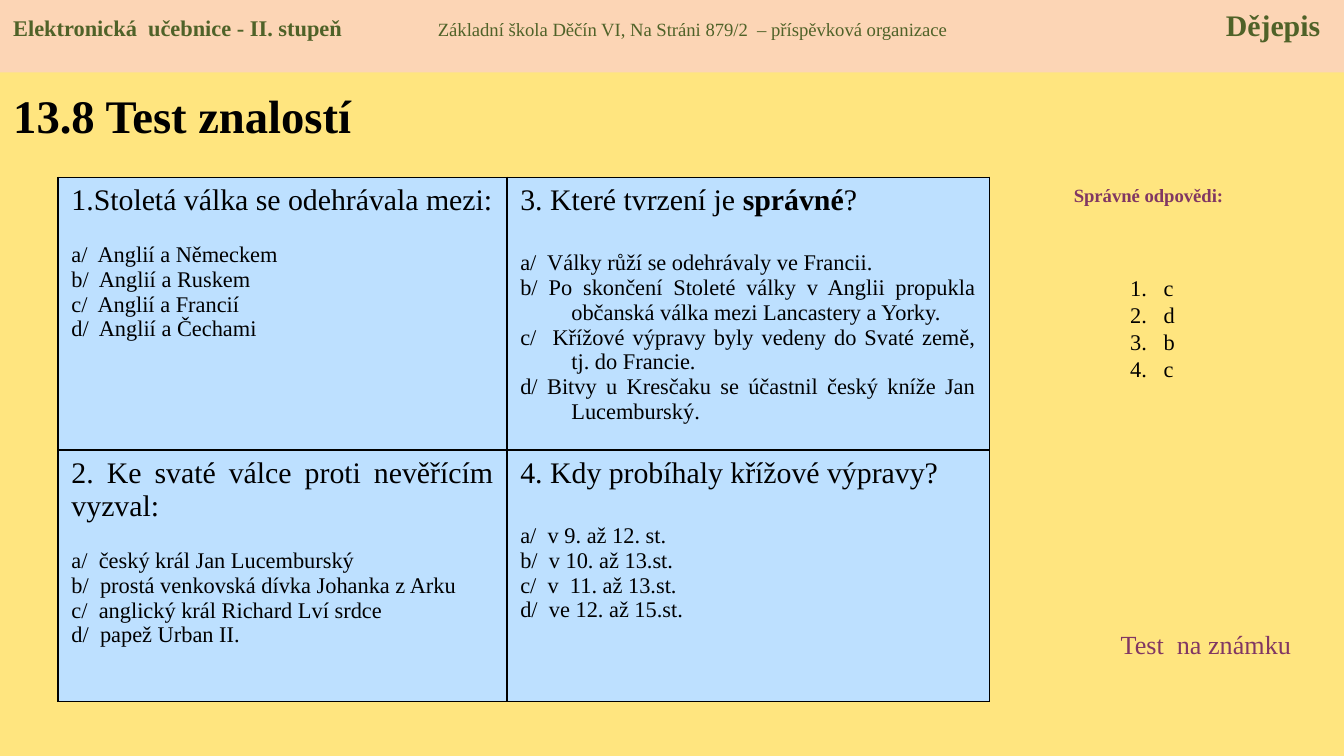
from dataclasses import dataclass, field
from typing import Any

from lxml.etree import SubElement
from pptx import Presentation
from pptx.dml.color import RGBColor as Rgb
from pptx.enum.shapes import MSO_SHAPE as Preset
from pptx.enum.text import MSO_ANCHOR as Anchor, PP_ALIGN as Align
from pptx.oxml.ns import qn
from pptx.util import Emu, Inches, Pt

UNIT = Inches(0.1)
COLUMNS, ROWS = 100, 56.25


@dataclass(frozen=True)
class Theme:
    font: str = "Times New Roman"
    page: str = "FFE57F"
    band: str = "FCD5B5"
    cell: str = "BDE0FF"
    ink: str = "000000"
    green: str = "4F6228"
    plum: str = "813763"
    title: int = 25
    heading: int = 16
    note: int = 14
    body: int = 12
    small: int = 10


THEME = Theme()


@dataclass(frozen=True)
class Span:
    text: str
    size: int = THEME.body
    color: str = THEME.ink
    bold: bool = False


@dataclass(frozen=True)
class Label:
    area: tuple[float, float, float, float]
    spans: list[Span]
    layout: dict[str, Any] = field(default_factory=dict)
    anchor: Anchor = Anchor.TOP


@dataclass(frozen=True)
class Question:
    heading: list[Span]
    answers: list[str]
    gap: float


def grid(value: float) -> Emu:
    return Emu(round(value * UNIT))


def assign(target: Any, values: dict[str, Any]) -> None:
    for name, value in values.items():
        setattr(target, name, value)


def write(para: Any, spans: list[Span], layout: dict[str, Any]) -> None:
    assign(para, layout)
    for span in spans:
        run = para.add_run()
        run.text = span.text
        assign(run.font, {"name": THEME.font, "size": Pt(span.size), "bold": span.bold})
        run.font.color.rgb = Rgb.from_string(span.color)


def hang(para: Any, indent: float) -> Any:
    properties = para._p.get_or_add_pPr()
    properties.set("marL", str(Inches(indent)))
    properties.set("indent", str(-Inches(indent)))
    return properties


def add_box(page: Any, area: tuple[float, float, float, float], anchor: Anchor) -> Any:
    box = page.shapes.add_textbox(*map(grid, area))
    assign(box.text_frame, {"word_wrap": True, "vertical_anchor": anchor})
    return box.text_frame


def draw_label(page: Any, label: Label) -> None:
    frame = add_box(page, label.area, label.anchor)
    write(frame.paragraphs[0], label.spans, label.layout)


def draw_header(page: Any, spans: list[Span], stops: list[tuple[float, str]]) -> None:
    band = page.shapes.add_shape(Preset.RECTANGLE, 0, 0, grid(COLUMNS), grid(5.4))
    band.shadow.inherit = False
    band.fill.solid()
    band.fill.fore_color.rgb = Rgb.from_string(THEME.band)
    band.line.fill.background()
    assign(band.text_frame, {"word_wrap": True, "vertical_anchor": Anchor.TOP})
    para = band.text_frame.paragraphs[0]
    write(para, spans, {"alignment": Align.LEFT})
    tabs = SubElement(para._p.get_or_add_pPr(), qn("a:tabLst"))
    for position, side in stops:
        SubElement(tabs, qn("a:tab"), pos=str(grid(position)), algn=side)


def draw_answers(page: Any, area: tuple[float, float, float, float], letters: str) -> None:
    frame = add_box(page, area, Anchor.TOP)
    for index, letter in enumerate(letters):
        para = frame.add_paragraph() if index else frame.paragraphs[0]
        write(para, [Span(letter)], {"alignment": Align.LEFT})
        SubElement(hang(para, 0.25), qn("a:buAutoNum"), type="arabicPeriod")


def border(cell: Any) -> None:
    properties = cell._tc.get_or_add_tcPr()
    for index, side in enumerate(("lnL", "lnR", "lnT", "lnB")):
        line = properties.makeelement(qn(f"a:{side}"), {"w": str(Pt(1))})
        paint = SubElement(line, qn("a:solidFill"))
        SubElement(paint, qn("a:srgbClr"), val=THEME.ink)
        properties.insert(index, line)


def fill_cell(cell: Any, question: Question) -> None:
    cell.fill.solid()
    cell.fill.fore_color.rgb = Rgb.from_string(THEME.cell)
    border(cell)
    frame = cell.text_frame
    write(frame.paragraphs[0], question.heading, {"alignment": Align.JUSTIFY})
    for index, answer in enumerate(question.answers):
        para = frame.add_paragraph()
        gap = Pt(0 if index else question.gap)
        write(para, [Span(answer)], {"alignment": Align.JUSTIFY, "space_before": gap})
        hang(para, 0.38)


def draw_quiz(page: Any, questions: list[list[Question]]) -> None:
    widths, heights = (33.4, 35.9), (20.3, 18.7)
    area = (4.32, 13.2, sum(widths), sum(heights))
    table = page.shapes.add_table(len(heights), len(widths), *map(grid, area)).table
    for column, width in zip(table.columns, widths):
        column.width = grid(width)
    for row, height, entries in zip(table.rows, heights, questions):
        row.height = grid(height)
        for cell, question in zip(row.cells, entries):
            fill_cell(cell, question)


def heading(text: str, bold: bool = False) -> Span:
    return Span(text, THEME.heading, bold=bold)


HEADER = [
    Span("Elektronická  učebnice - II. stupeň\t", THEME.body, THEME.green, True),
    Span("Základní škola Děčín VI, Na Stráni 879/2  – příspěvková organizace\t",
         THEME.small, THEME.green),
    Span("Dějepis", THEME.heading, THEME.green, True),
]
LABELS = [
    Label((0, 5.3, 36.2, 6.5), [Span("13.8 Test znalostí", THEME.title, bold=True)],
          anchor=Anchor.MIDDLE),
    Label((77.6, 13.2, 15.7, 2.7),
          [Span("Správné odpovědi:", THEME.small, THEME.plum, True)],
          {"alignment": Align.CENTER}),
    Label((82.4, 46.3, 15.7, 3.4), [Span("Test  na známku", THEME.note, THEME.plum)]),
]
QUESTIONS = [
    [
        Question([heading("1.Stoletá válka se odehrávala mezi:")],
                 ["a/  Anglií a Německem", "b/  Anglií a Ruskem",
                  "c/  Anglií a Francií", "d/  Anglií a Čechami"], 13.4),
        Question([heading("3. Které tvrzení je "), heading("správné", True), heading("?")],
                 ["a/  Války růží se odehrávaly ve Francii.",
                  "b/ Po skončení Stoleté války v Anglii propukla občanská válka "
                  "mezi Lancastery a Yorky.",
                  "c/  Křížové výpravy byly vedeny do Svaté země, tj. do Francie.",
                  "d/ Bitvy u Kresčaku se účastnil český kníže Jan Lucemburský."], 17.8),
    ],
    [
        Question([heading("2. Ke svaté válce proti nevěřícím vyzval:")],
                 ["a/  český král Jan Lucemburský",
                  "b/  prostá venkovská dívka Johanka z Arku",
                  "c/  anglický král Richard Lví srdce", "d/  papež Urban II."], 13.4),
        Question([heading("4. Kdy probíhaly křížové výpravy?")],
                 ["a/  v 9. až 12. st.", "b/  v 10. až 13.st.",
                  "c/  v  11. až 13.st.", "d/  ve 12. až 15.st."], 17.8),
    ],
]


def main() -> None:
    deck = Presentation()
    assign(deck, {"slide_width": grid(COLUMNS), "slide_height": grid(ROWS)})
    page = deck.slides.add_slide(deck.slide_layouts[6])
    page.background.fill.solid()
    page.background.fill.fore_color.rgb = Rgb.from_string(THEME.page)
    for label in LABELS:
        draw_label(page, label)
    draw_quiz(page, QUESTIONS)
    draw_answers(page, (83.1, 19.9, 5.5, 11), "cdbc")
    draw_header(page, HEADER, [(31.6, "l"), (97.25, "r")])
    deck.save("out.pptx")


if __name__ == "__main__":
    main()
